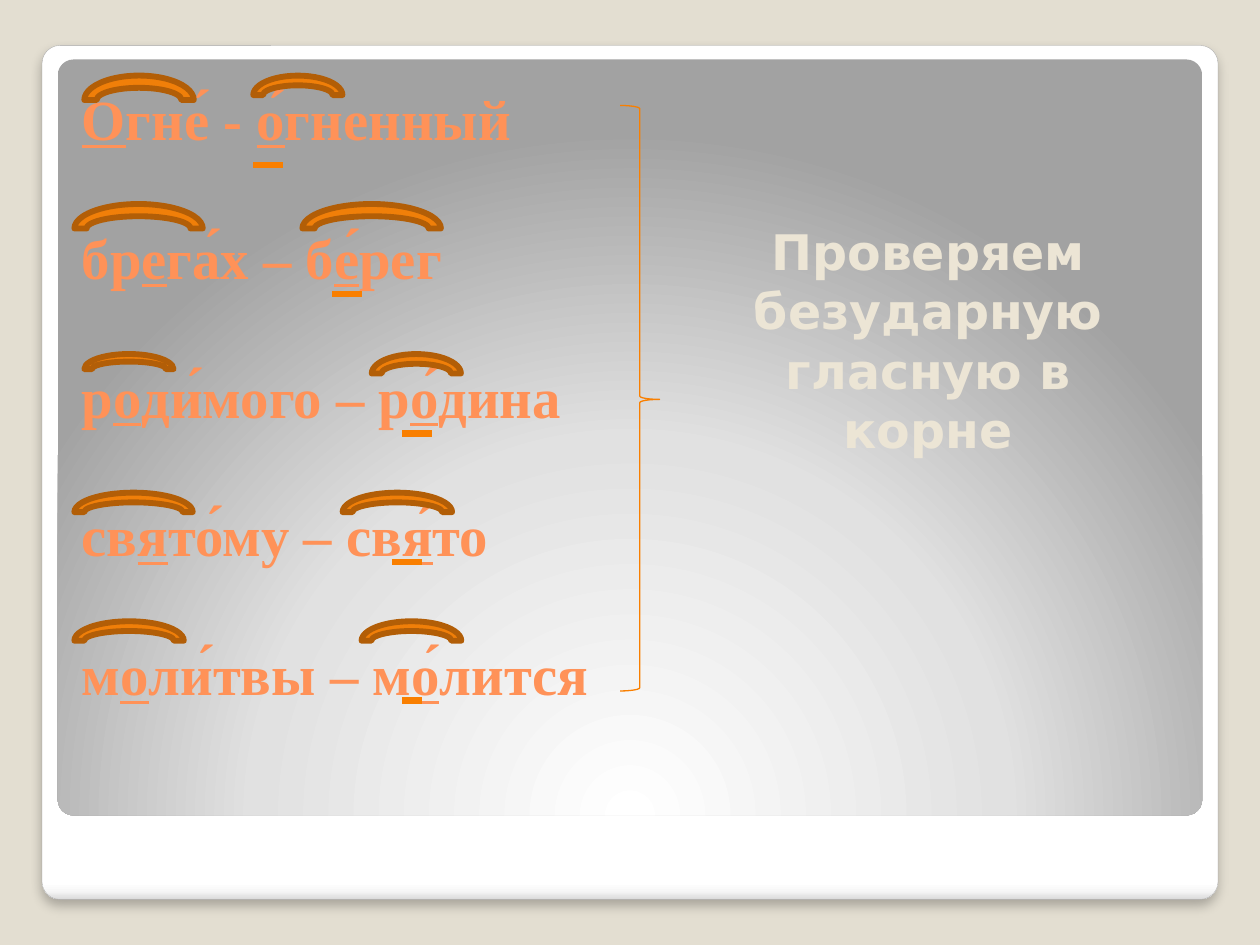
from lxml.etree import SubElement
from pptx import Presentation
from pptx.dml.color import RGBColor
from pptx.enum.shapes import MSO_CONNECTOR, MSO_SHAPE
from pptx.enum.text import MSO_ANCHOR, PP_ALIGN
from pptx.oxml import parse_xml
from pptx.oxml.ns import nsdecls, qn
from pptx.util import Pt


def color(value):
    return RGBColor.from_string(value)


class SlideBuilder:
    """Keeps the lesson style and draws on the current slide."""

    word_font, note_font = "Times New Roman", "DejaVu Sans"
    word_color, note_color = "FF9258", "ECE5D5"
    arc_fill, arc_line, mark_color = "F07F09", "B25E07", "F97F00"

    def __init__(self, deck, background):
        self.page = deck.slides.add_slide(deck.slide_layouts[6])
        fill = self.page.background.fill
        fill.solid()
        fill.fore_color.rgb = color(background)

    def shape(self, kind, bounds, line=None, width=1, fill=None, adjustments=()):
        shape = self.page.shapes.add_shape(kind, *map(Pt, bounds))
        shape.shadow.inherit = False
        for index, value in enumerate(adjustments):
            shape.adjustments[index] = value
        if fill:
            shape.fill.solid()
            shape.fill.fore_color.rgb = color(fill)
        else:
            shape.fill.background()
        if line:
            shape.line.color.rgb = color(line)
            shape.line.width = Pt(width)
        else:
            shape.line.fill.background()
        return shape

    def panel(self, bounds, stops, direction, line=None, width=1):
        panel = self.shape(MSO_SHAPE.ROUNDED_RECTANGLE, bounds, line, width,
                           adjustments=(0.021,))
        stop_xml = "".join(
            f'<a:gs pos="{position * 1000}"><a:srgbClr val="{value}"/></a:gs>'
            for position, value in stops)
        gradient = parse_xml(f'<a:gradFill {nsdecls("a")} rotWithShape="1">'
                             f'<a:gsLst>{stop_xml}</a:gsLst>{direction}</a:gradFill>')
        properties = panel.element.spPr
        properties.replace(properties.find(qn("a:noFill")), gradient)
        return panel

    def drop_shadow(self, shape, blur, distance, opacity):
        effects = shape.element.spPr.find(qn("a:effectLst"))
        effects.append(parse_xml(
            f'<a:outerShdw {nsdecls("a")} blurRad="{Pt(blur)}" dist="{Pt(distance)}" '
            f'dir="5400000" algn="t" rotWithShape="0"><a:srgbClr val="000000">'
            f'<a:alpha val="{opacity * 1000}"/></a:srgbClr></a:outerShdw>'))

    def root_arc(self, *bounds):
        self.shape(MSO_SHAPE.BLOCK_ARC, bounds, self.arc_line, 3.35, self.arc_fill)

    def brace(self, *bounds):
        self.shape(MSO_SHAPE.RIGHT_BRACE, bounds, self.mark_color, 0.75,
                   adjustments=(0.083, 0.502))

    def vowel_mark(self, left, top, right):
        mark = self.page.shapes.add_connector(
            MSO_CONNECTOR.STRAIGHT, Pt(left), Pt(top), Pt(right), Pt(top))
        mark.line.color.rgb = color(self.mark_color)
        mark.line.width = Pt(3.5)
        SubElement(mark.element.spPr, qn("a:effectLst"))

    def text_frame(self, bounds, top_inset):
        frame = self.page.shapes.add_textbox(*map(Pt, bounds)).text_frame
        frame.word_wrap = True
        frame.vertical_anchor = MSO_ANCHOR.TOP
        frame.margin_top = Pt(top_inset)
        return frame

    def paragraphs(self, frame, lines):
        for index, line in enumerate(lines):
            yield frame.add_paragraph() if index else frame.paragraphs[0], line

    def add_run(self, para, text, font, size, value, underline=False):
        span = para.add_run()
        span.text = text
        span.font.name, span.font.size = font, Pt(size)
        span.font.bold, span.font.underline = True, underline
        span.font.color.rgb = color(value)

    def word_list(self, bounds, lines, gap):
        """Letters between underscores are underlined."""
        frame = self.text_frame(bounds, 4.5)
        for para, line in self.paragraphs(frame, lines):
            para.space_after = Pt(gap)
            for index, text in enumerate(line.split("_")):
                if text:
                    self.add_run(para, text, self.word_font, 32.4,
                                 self.word_color, index % 2 == 1)

    def note(self, bounds, lines):
        frame = self.text_frame(bounds, 3.6)
        for para, line in self.paragraphs(frame, lines):
            para.alignment = PP_ALIGN.CENTER
            para.line_spacing = Pt(34)
            self.add_run(para, line, self.note_font, 28, self.note_color)


def main():
    deck = Presentation()
    deck.slide_width, deck.slide_height = Pt(720), Pt(540)
    builder = SlideBuilder(deck, "E3DED1")

    # Frame and gradient panel
    frame = builder.panel(
        (24, 26, 672, 488),
        [(0, "FFFFFF"), (98, "FFFFFF"), (99, "F7F7F7"), (100, "DADADA")],
        '<a:lin ang="5400000" scaled="0"/>', "A4A4A4", 0.16)
    builder.drop_shadow(frame, 6, 4, 25)
    builder.panel(
        (33, 34, 654, 432), [(0, "FFFFFF"), (55, "E1E1E1"), (100, "A2A2A2")],
        '<a:path path="circle">'
        '<a:fillToRect l="50000" t="175000" r="50000" b="-75000"/></a:path>')

    # Word pairs
    builder.word_list((39.6, 43.2, 644, 432), [
        "_О_гне́ - _о́_гненный",
        "бр_е_га́х – б_е́_рег",
        "р_о_ди́мого – р_о́_дина",
        "св_я_то́му – св_я́_то",
        "м_о_ли́твы – м_о́_лится",
    ], 40.5)

    # For each row: arc top, root arcs (left, width, height), vowel mark (left, top, right)
    rows = [
        (43.2, [(48.2, 62.6, 28), (144.7, 51, 22.3)], (144.7, 94.3, 161.5)),
        (116.6, [(42.5, 73.4, 28), (172.8, 79.2, 28)], (190, 167.8, 206.8)),
        (202.3, [(48.2, 51, 17.3), (212.4, 51, 22.3)], (229.8, 247.7, 246.8)),
        (281.5, [(42.5, 67.7, 22.3), (195.8, 62.6, 22.3)], (224, 321.1, 241)),
        (355, [(42.5, 62.6, 22.3), (206.6, 57, 22.3)], (229.8, 400.3, 241)),
    ]
    for top, arcs, mark in rows:
        for left, width, height in arcs:
            builder.root_arc(left, top, width, height)
        builder.vowel_mark(*mark)

    # Brace and rule
    builder.brace(354.3, 60.3, 22.6, 334.6)
    builder.note((377, 122.4, 306.7, 143.3),
                 ["Проверяем", "безударную", "гласную в", "корне"])

    deck.save("out.pptx")


if __name__ == "__main__":
    main()
